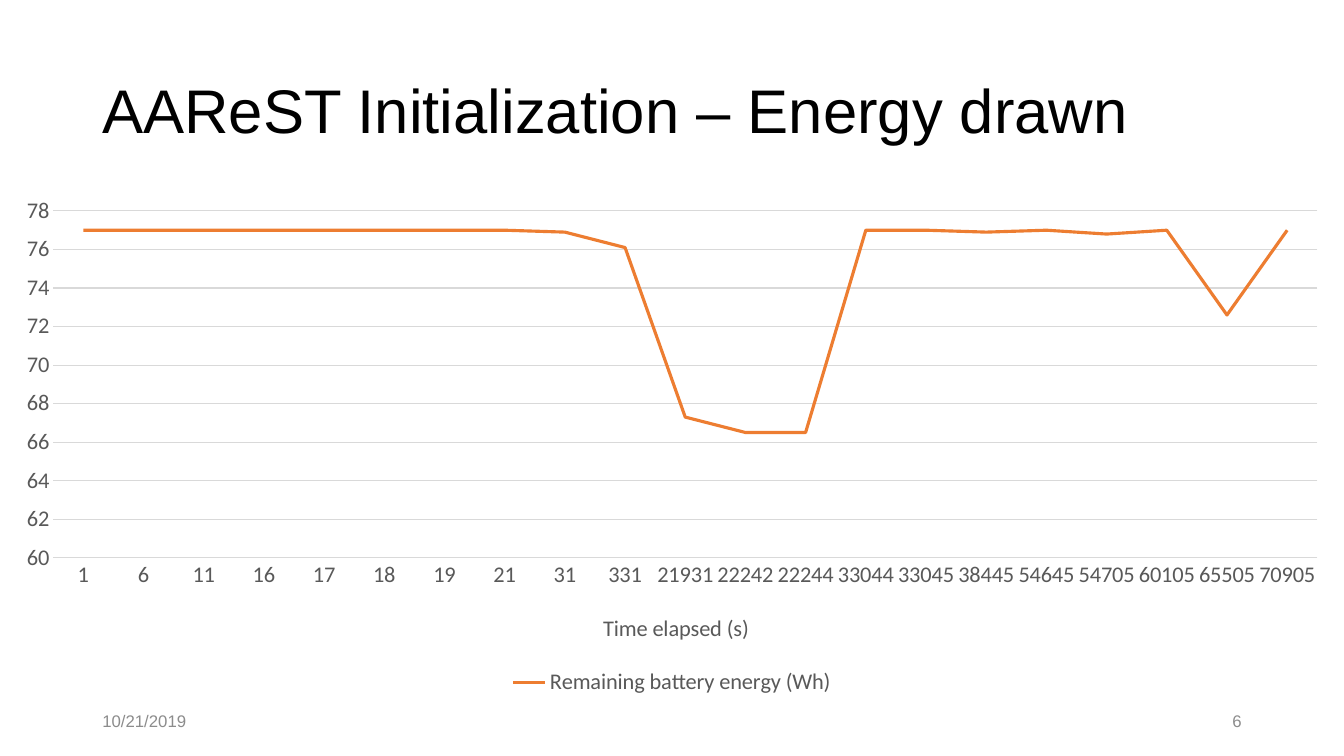
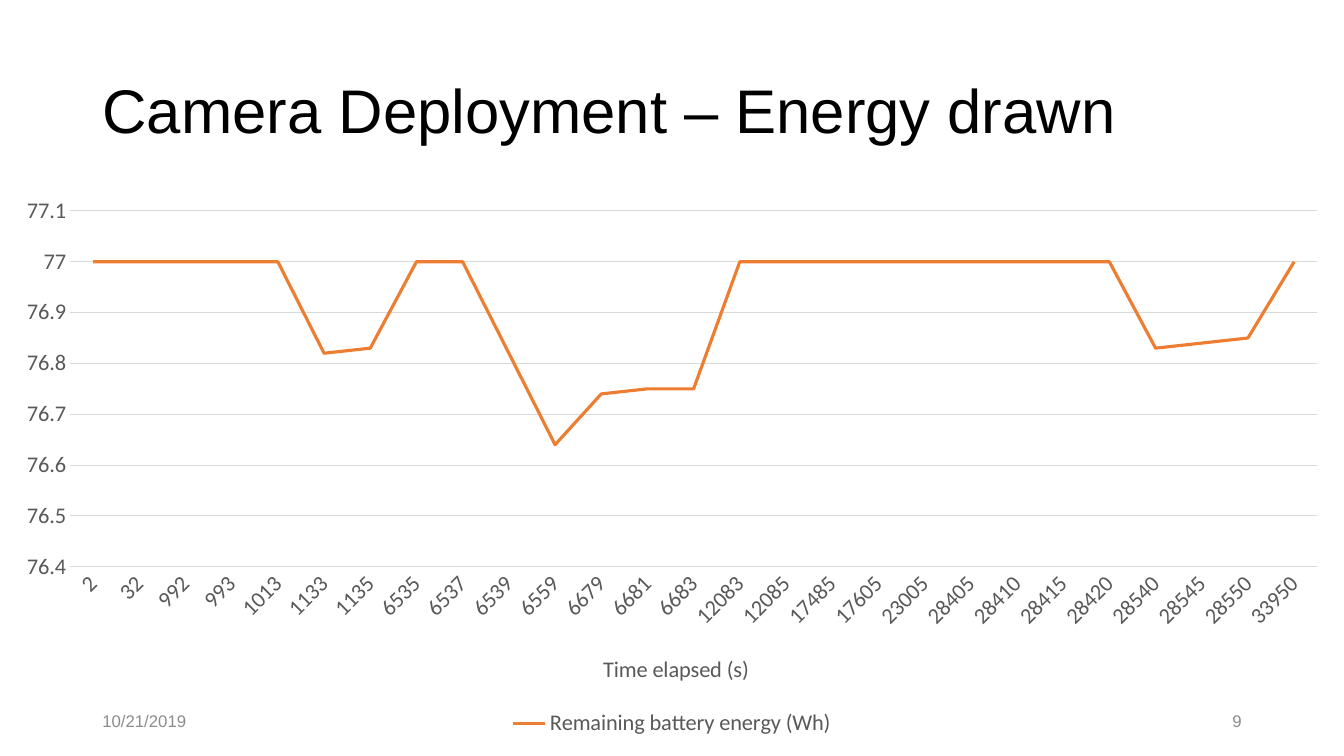
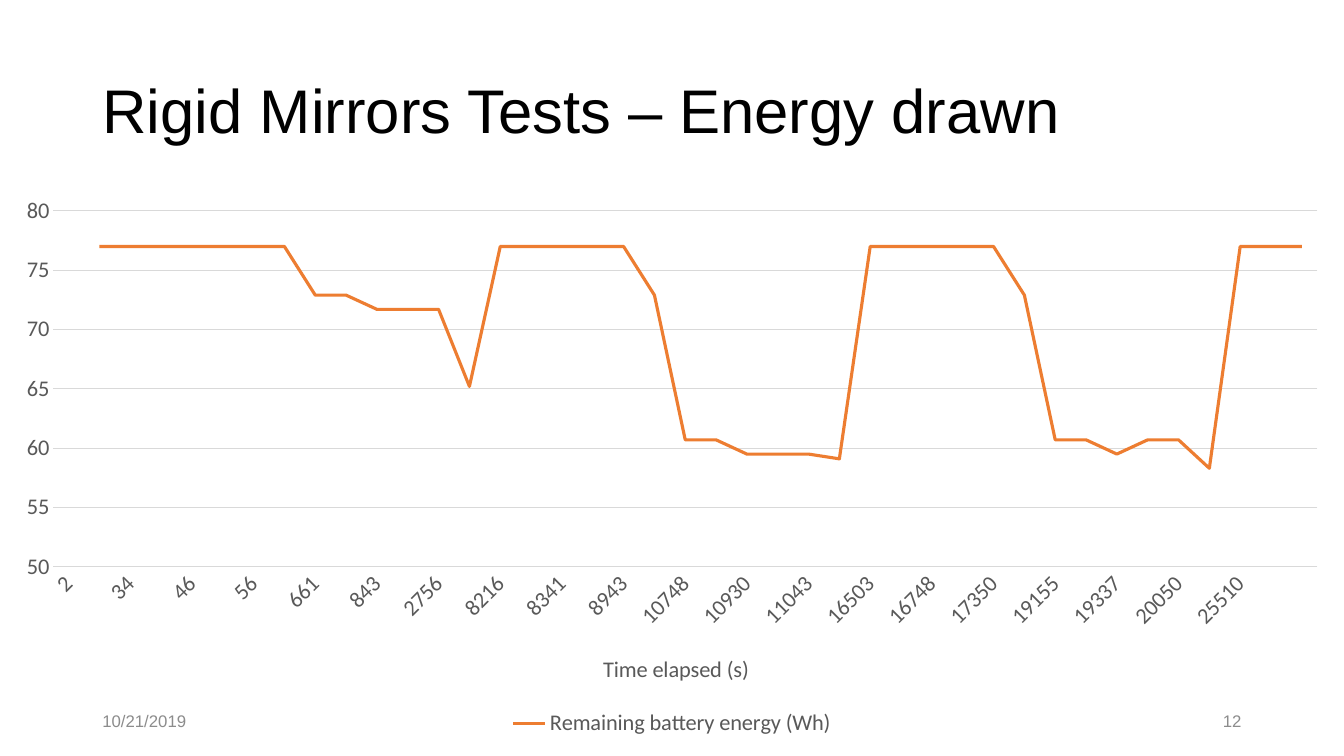
from dataclasses import dataclass

from lxml import etree
from pptx import Presentation
from pptx.chart.data import CategoryChartData
from pptx.dml.color import RGBColor
from pptx.enum.chart import XL_CHART_TYPE, XL_LEGEND_POSITION, XL_TICK_MARK
from pptx.enum.text import MSO_ANCHOR, MSO_AUTO_SIZE, PP_ALIGN
from pptx.oxml.ns import qn
from pptx.util import Pt

LINE_CHART = XL_CHART_TYPE.LINE
BOTTOM = XL_LEGEND_POSITION.BOTTOM
NO_TICK = XL_TICK_MARK.NONE
MIDDLE = MSO_ANCHOR.MIDDLE
NO_FIT = MSO_AUTO_SIZE.NONE
LEFT, RIGHT = PP_ALIGN.LEFT, PP_ALIGN.RIGHT

PAGE_WIDTH, PAGE_HEIGHT = 960, 540
MARGIN = 66
CONTENT_WIDTH = PAGE_WIDTH - 2 * MARGIN
CHART_TOP = 133.2
FOOTER_TOP, FOOTER_WIDTH, FOOTER_HEIGHT = 500.5, 216, 28.75

BLACK, FOOTER_GREY, LABEL_GREY = "000000", "8C8C8C", "595959"
GRID_GREY, ORANGE = "D9D9D9", "ED7D31"
TEXT_FONT, CHART_FONT, CHART_SIZE = "Arial", "Calibri", 16

DATE = "10/21/2019"
SERIES_NAME = "Remaining battery energy (Wh)"
TIME_TITLE = "Time elapsed (s)"


@dataclass
class EnergySlide:
    """Content and scale of one battery energy slide."""

    title: str
    number: int
    times: list
    energy: list
    scale: tuple
    chart_height: float
    scale_room: float
    label_room: float


ENERGY_SLIDES = [
    EnergySlide(
        "AAReST Initialization – Energy drawn", 6,
        "1 6 11 16 17 18 19 21 31 331 21931 22242 22244 33044 33045 38445 "
        "54645 54705 60105 65505 70905".split(),
        [77] * 8 + [76.9, 76.1, 67.3, 66.5, 66.5, 77, 77, 76.9, 77, 76.8,
                    77, 72.6, 77],
        (60, 78, 2), 367.2, 38, 102),
    EnergySlide(
        "Camera Deployment – Energy drawn", 9,
        "2 32 992 993 1013 1133 1135 6535 6537 6539 6559 6679 6681 6683 12083 "
        "12085 17485 17605 23005 28405 28410 28415 28420 28540 28545 28550 "
        "33950".split(),
        [77] * 5 + [76.82, 76.83, 77, 77, 76.82, 76.64, 76.74, 76.75, 76.75]
        + [77] * 9 + [76.83, 76.84, 76.85, 77],
        (76.4, 77.1, 0.1), 396.7, 50, 125),
    EnergySlide(
        "Rigid Mirrors Tests – Energy drawn", 12,
        "2 4 34 44 46 51 56 656 661 841 843 845 2756 8156 8216 8336 8341 8343 "
        "8943 10743 10748 10928 10930 10932 11043 16443 16503 16743 16748 "
        "16750 17350 19150 19155 19335 19337 19339 20050 25450 25510 "
        "25750".split() + [""],
        [None] + [77] * 7 + [72.9] * 2 + [71.7] * 3 + [65.2] + [77] * 5
        + [72.9, 60.7, 60.7, 59.5, 59.5, 59.5, 59.1] + [77] * 5
        + [72.9, 60.7, 60.7, 59.5, 60.7, 60.7, 58.3] + [77] * 3,
        (50, 80, 5), 396.7, 38, 125),
]


def color(value):
    """Turn a hex string into a colour."""
    return RGBColor.from_string(value)


def format_font(font, name, size, hex_color):
    """Set the face, size and colour of a font."""
    font.name = name
    font.size = Pt(size)
    font.bold = False
    font.color.rgb = color(hex_color)


def place(shape, left, top, width, height):
    """Move a shape to a box given in points."""
    shape.left, shape.top = Pt(left), Pt(top)
    shape.width, shape.height = Pt(width), Pt(height)


def write_text(shape, text, size=12, hex_color=FOOTER_GREY, align=LEFT,
               line_spacing=1.0):
    """Write one formatted paragraph into a shape."""
    frame = shape.text_frame
    frame.word_wrap = True
    frame.auto_size = NO_FIT
    frame.vertical_anchor = MIDDLE
    para = frame.paragraphs[0]
    para.alignment = align
    para.line_spacing = line_spacing
    span = para.add_run()
    span.text = text
    format_font(span.font, TEXT_FONT, size, hex_color)


def add_title(page, text):
    """Fill the title placeholder."""
    title = page.shapes.title
    place(title, MARGIN, 28.75, CONTENT_WIDTH, 104.4)
    write_text(title, text, size=44, hex_color=BLACK, line_spacing=0.9)


def add_footer(page, number):
    """Put the date on the left and the page number on the right."""
    right_box = PAGE_WIDTH - MARGIN - FOOTER_WIDTH
    for left, text, align in ((MARGIN, DATE, LEFT),
                              (right_box, str(number), RIGHT)):
        box = page.shapes.add_textbox(Pt(left), Pt(FOOTER_TOP),
                                      Pt(FOOTER_WIDTH), Pt(FOOTER_HEIGHT))
        write_text(box, text, align=align)


def set_layout(parent, index, **settings):
    """Give a chart part a manual layout in fractions of the chart."""
    for old_layout in parent.findall(qn("c:layout")):
        parent.remove(old_layout)
    layout = etree.Element(qn("c:layout"))
    manual = etree.SubElement(layout, qn("c:manualLayout"))
    for name, value in settings.items():
        text = value if isinstance(value, str) else f"{value:.4f}"
        etree.SubElement(manual, qn(f"c:{name}")).set("val", text)
    parent.insert(index, layout)


def format_axis(axis):
    """Apply the label style that both axes share."""
    axis.major_tick_mark = axis.minor_tick_mark = NO_TICK
    format_font(axis.tick_labels.font, CHART_FONT, CHART_SIZE, LABEL_GREY)


def format_line(line, hex_color, width):
    """Set the colour and width of a line."""
    line.color.rgb = color(hex_color)
    line.width = Pt(width)


def format_time_axis(axis):
    """Style the time axis and its title, with automatic label rotation."""
    format_axis(axis)
    axis.has_major_gridlines = False
    format_line(axis.format.line, GRID_GREY, 0.75)
    body = axis._element.find(qn("c:txPr")).find(qn("a:bodyPr"))
    body.set("rot", "-60000000")
    span = axis.axis_title.text_frame.paragraphs[0].add_run()
    span.text = TIME_TITLE
    format_font(span.font, CHART_FONT, CHART_SIZE, LABEL_GREY)


def format_energy_axis(axis, scale):
    """Style the energy axis and set its scale."""
    format_axis(axis)
    axis.minimum_scale, axis.maximum_scale, axis.major_unit = scale
    axis.format.line.fill.background()
    axis.has_major_gridlines = True
    format_line(axis.major_gridlines.format.line, GRID_GREY, 0.75)
    axis.tick_labels.number_format = "General"
    axis.tick_labels.number_format_is_linked = False


def add_energy_chart(page, content, left, top, width, height):
    """Draw the battery energy line chart in the given box."""
    data = CategoryChartData()
    data.categories = content.times
    data.add_series(SERIES_NAME, content.energy)
    chart = page.shapes.add_chart(LINE_CHART, Pt(left), Pt(top), Pt(width),
                                  Pt(height), data).chart
    format_font(chart.font, CHART_FONT, CHART_SIZE, BLACK)
    chart.has_title = False
    chart.has_legend = True
    chart.legend.position = BOTTOM
    chart.legend.include_in_layout = False
    format_font(chart.legend.font, CHART_FONT, CHART_SIZE, LABEL_GREY)
    chart.plots[0].vary_by_categories = False
    series = chart.plots[0].series[0]
    series.smooth = False
    format_line(series.format.line, ORANGE, 2.25)
    format_time_axis(chart.category_axis)
    format_energy_axis(chart.value_axis, content.scale)

    plot_top, plot_right = 17.5, 19
    plot_width = width - content.scale_room - plot_right
    plot_height = height - plot_top - content.label_room
    set_layout(chart._chartSpace.chart.plotArea, 0, layoutTarget="inner",
               xMode="edge", yMode="edge",
               x=content.scale_room / width, y=plot_top / height,
               w=plot_width / width, h=plot_height / height)
    set_layout(chart.category_axis.axis_title._element, 1,
               xMode="edge", yMode="edge",
               x=428 / width, y=(height - 65.5) / height)


def add_energy_slide(deck, content):
    """Add one slide with a title, footer and energy chart."""
    page = deck.slides.add_slide(deck.slide_layouts[5])
    add_title(page, content.title)
    add_footer(page, content.number)
    add_energy_chart(page, content, 0, CHART_TOP, PAGE_WIDTH,
                     content.chart_height)


def main():
    """Build and save the deck."""
    deck = Presentation()
    deck.slide_width, deck.slide_height = Pt(PAGE_WIDTH), Pt(PAGE_HEIGHT)
    for content in ENERGY_SLIDES:
        add_energy_slide(deck, content)
    deck.save("out.pptx")


if __name__ == "__main__":
    main()
